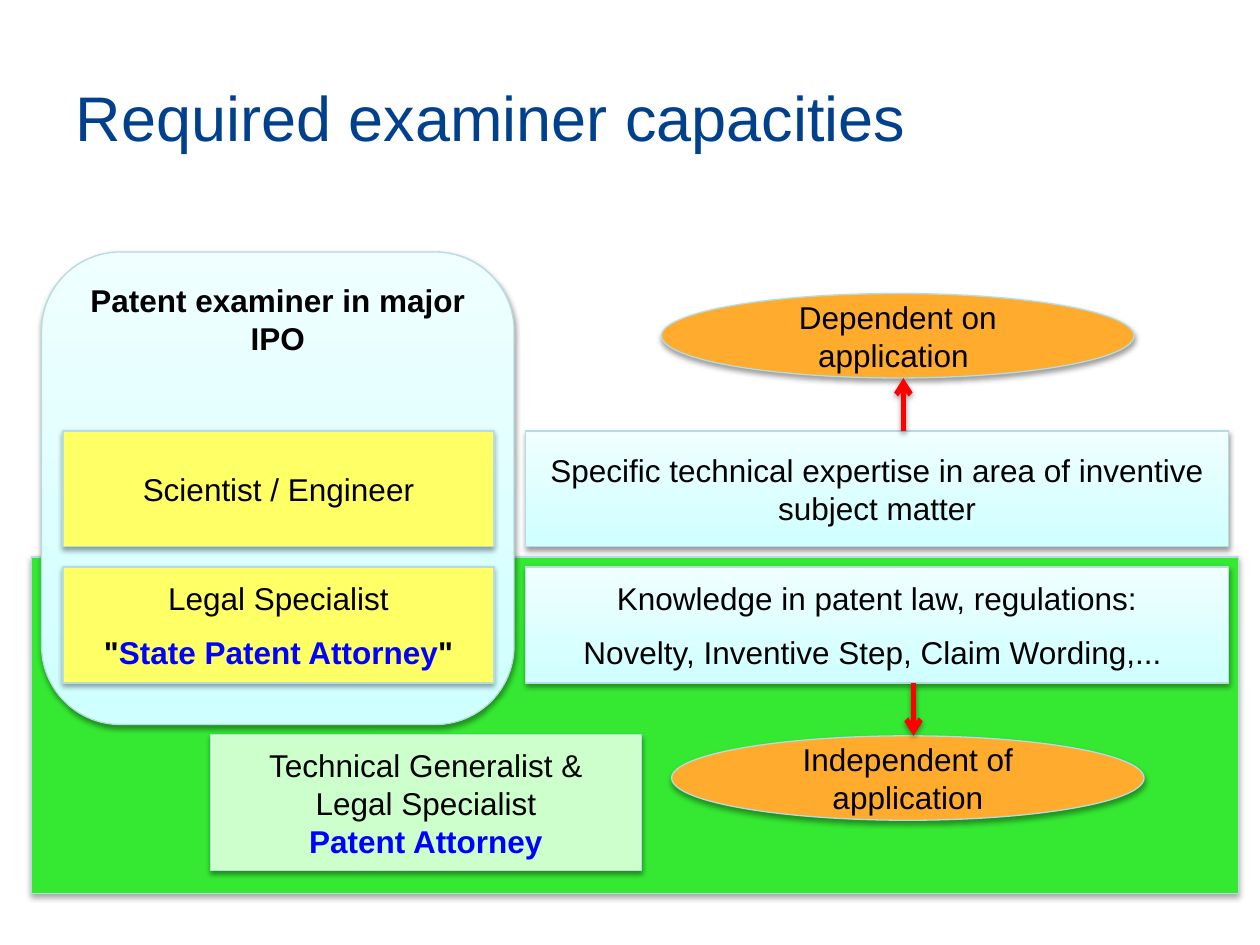
from lxml import etree
from pptx import Presentation
from pptx.dml.color import RGBColor as Rgb
from pptx.enum.shapes import MSO_CONNECTOR as Link, MSO_SHAPE as Shape
from pptx.enum.text import MSO_ANCHOR as Anchor, PP_ALIGN as Align
from pptx.oxml import parse_xml
from pptx.oxml.ns import nsdecls, qn
from pptx.util import Inches, Pt

BLACK = Rgb(0x00, 0x00, 0x00)
BLUE = Rgb(0x00, 0x00, 0xFF)
NAVY = Rgb(0x00, 0x40, 0x8C)
RED = Rgb(0xFF, 0x00, 0x00)
EDGE = Rgb(0xB6, 0xDC, 0xDF)
GREEN = Rgb(0x35, 0xE9, 0x33)
MINT = Rgb(0xCC, 0xFF, 0xCC)
YELLOW = Rgb(0xFF, 0xFF, 0x66)
ORANGE = Rgb(0xFF, 0xAB, 0x2D)
FADE = (Rgb(0xF0, 0xFF, 0xFF), Rgb(0xCF, 0xFF, 0xFF))

BODY = {"name": "Arial", "size": Pt(18), "bold": False}
HEAD = {"name": "Arial", "size": Pt(36), "bold": False}
BOLD = {"bold": True}


def style(font, color, form):
    for key, value in form.items():
        setattr(font, key, value)
    font.color.rgb = color


def shade(item, alpha=38, drop=1.6):
    props = item._element.spPr
    for old in props.findall(qn("a:effectLst")):
        props.remove(old)
    props.append(parse_xml(
        f'<a:effectLst {nsdecls("a")}><a:outerShdw blurRad="{Pt(3.1)}" '
        f'dist="{Pt(drop)}" dir="5400000" rotWithShape="0"><a:srgbClr val="000000">'
        f'<a:alpha val="{alpha * 1000}"/></a:srgbClr></a:outerShdw></a:effectLst>'))


def write(item, paras, gap=9, anchor=Anchor.MIDDLE):
    frame = item.text_frame
    frame.word_wrap = True
    frame.vertical_anchor = anchor
    for i, runs in enumerate(paras):
        para = frame.add_paragraph() if i else frame.paragraphs[0]
        para.alignment = Align.CENTER
        if i:
            para.space_before = Pt(gap)
        for text, color, form in runs:
            run = para.add_run()
            run.text = text
            style(run.font, color, BODY | form)


def plain(*lines):
    return [[(line, BLACK, {})] for line in lines]


def block(slide, kind, box, color):
    item = slide.shapes.add_shape(kind, *map(Inches, box))
    item.shadow.inherit = False
    if color is FADE:
        item.fill.gradient()
        item.fill.gradient_angle = 270
        for stop, tint in zip(item.fill.gradient_stops, FADE):
            stop.color.rgb = tint
    else:
        item.fill.solid()
        item.fill.fore_color.rgb = color
    item.line.color.rgb = EDGE
    item.line.width = Pt(0.75)
    shade(item)
    return item


def arrow(slide, x, top, end):
    line = slide.shapes.add_connector(
        Link.STRAIGHT, *map(Inches, (x, top, x, end)))
    line.line.color.rgb = RED
    line.line.width = Pt(3)
    etree.SubElement(line.line._get_or_add_ln(), qn("a:tailEnd"), type="arrow")
    shade(line)


def title(slide, box):
    item = slide.shapes.title
    for key, value in zip(("left", "top", "width", "height"), box):
        setattr(item, key, Inches(value))
    frame = item.text_frame
    frame.text = "Required examiner capacities"
    frame.vertical_anchor = Anchor.MIDDLE
    para = frame.paragraphs[0]
    para.alignment = Align.LEFT
    style(para.runs[0].font, NAVY, HEAD)


def ground(slide, box):
    shade(block(slide, Shape.RECTANGLE, box, GREEN), 35, 1.8)


def office(slide, box):
    x, y, wide, _ = box
    panel = block(slide, Shape.ROUNDED_RECTANGLE, box, FADE)
    write(panel, [[("Patent examiner in major IPO", BLACK, BOLD)]],
          anchor=Anchor.TOP)
    roles = (
        plain("Scientist / Engineer"),
        plain("Legal Specialist") + [[
            ('"', BLACK, BOLD),
            ("State Patent Attorney", BLUE, BOLD),
            ('"', BLACK, BOLD)]],
    )
    for i, paras in enumerate(roles):
        place = (x + 0.17, y + 1.42 + i * 1.08, wide - 0.33, 0.92)
        write(block(slide, Shape.RECTANGLE, place, YELLOW), paras)


def skill(slide, box, lines, label, shift, up):
    x, y, _, high = box
    gap, tall = 0.42, 0.67
    write(block(slide, Shape.RECTANGLE, box, FADE), plain(*lines))
    start = y if up else y + high
    end = start - gap if up else start + gap
    top = end - tall if up else end
    oval = block(slide, Shape.OVAL, (x + shift, top, 3.75, tall), ORANGE)
    write(oval, plain(label))
    arrow(slide, x + shift + 1.92, start, end)


def agent(slide, box):
    paras = plain("Technical Generalist &", "Legal Specialist")
    paras.append([("Patent Attorney", BLUE, BOLD)])
    write(block(slide, Shape.RECTANGLE, box, MINT), paras, gap=0)


def main():
    deck = Presentation()
    deck.slide_width, deck.slide_height = Inches(10), Inches(7.5)
    slide = deck.slides.add_slide(deck.slide_layouts[5])
    title(slide, (0.5, 0.3, 9, 1.25))
    ground(slide, (0.25, 4.42, 9.58, 2.67))
    office(slide, (0.33, 2, 3.75, 3.75))
    skill(slide, (4.17, 4.5, 5.58, 0.92),
          ("Knowledge in patent law, regulations:",
           "Novelty, Inventive Step, Claim Wording,... "),
          "Independent of application", 1.16, False)
    skill(slide, (4.17, 3.42, 5.58, 0.92),
          ("Specific technical expertise in area of inventive subject matter",),
          "Dependent on application ", 1.08, True)
    agent(slide, (1.67, 5.83, 3.42, 1.08))
    deck.save("out.pptx")


if __name__ == "__main__":
    main()
